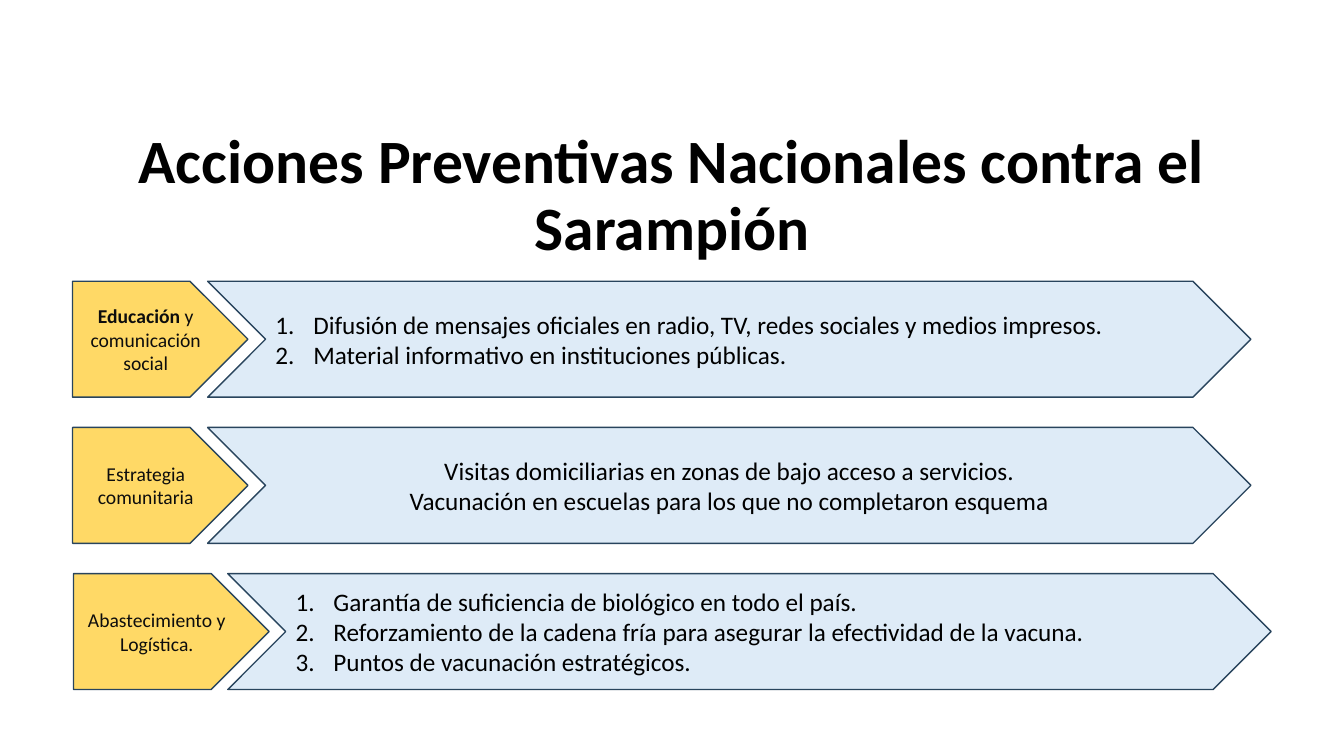
from lxml import etree
from pptx import Presentation
from pptx.dml.color import RGBColor
from pptx.enum import shapes, text
from pptx.oxml import ns
from pptx.util import Pt

COLORS = {
    "title": "000000",
    "label_fill": "FFD966",
    "label_text": "0D0D0D",
    "action_fill": "DEEBF7",
    "action_text": "000000",
    "outline": "28445D",
}
TITLE_FORMAT = {"name": "Calibri", "size": Pt(44), "bold": True}
LABEL_FORMAT = {"name": "Calibri", "size": Pt(14), "bold": False}
ACTION_FORMAT = {"name": "Calibri", "size": Pt(18), "bold": False}

ROW_TOP, ROW_PITCH, ROW_HEIGHT = 200.9, 104.4, 82.8
ACTION_WIDTH = 745.2
LIST_INDENT = 27

# label left, label width, action left, label runs (text, bold), numbered, actions
ROWS = [
    (51.84, 125.3, 148.3,
     [("Educación ", True), ("y comunicación social", False)], True,
     ["Difusión de mensajes oficiales en radio, TV, redes sociales y medios impresos.",
      "Material informativo en instituciones públicas."]),
    (51.84, 125.3, 148.3,
     [("Estrategia comunitaria", False)], False,
     ["Visitas domiciliarias en zonas de bajo acceso a servicios.",
      "Vacunación en escuelas para los que no completaron esquema"]),
    (52.56, 139.7, 162.7,
     [("Abastecimiento y Logística.", False)], True,
     ["Garantía de suficiencia de biológico en todo el país.",
      "Reforzamiento de la cadena fría para asegurar la efectividad de la vacuna.",
      "Puntos de vacunación estratégicos."]),
]


def rgb(name):
    return RGBColor.from_string(COLORS[name])


def format_font(font, values, color):
    for name, value in values.items():
        setattr(font, name, value)
    font.color.rgb = rgb(color)


def number_paragraph(paragraph):
    properties = paragraph._p.get_or_add_pPr()
    properties.set("marL", str(Pt(LIST_INDENT)))
    properties.set("indent", str(-Pt(LIST_INDENT)))
    bullet = etree.SubElement(properties, ns.qn("a:buAutoNum"))
    bullet.set("type", "arabicPeriod")


def add_title(slide, wording):
    title = slide.shapes.title
    title.left, title.top, title.width, title.height = (
        Pt(-9.4), Pt(88.6), Pt(979.2), Pt(104.4))
    frame = title.text_frame
    frame.word_wrap = True
    frame.auto_size = text.MSO_AUTO_SIZE.NONE
    frame.vertical_anchor = text.MSO_ANCHOR.MIDDLE
    paragraph = frame.paragraphs[0]
    paragraph.alignment = text.PP_ALIGN.CENTER
    paragraph.line_spacing = 0.9
    run = paragraph.add_run()
    run.text = wording
    format_font(run.font, TITLE_FORMAT, "title")


def add_arrow(group, kind, left, top, width, fill):
    shape = group.shapes.add_shape(kind, Pt(left), Pt(top), Pt(width), Pt(ROW_HEIGHT))
    shape.shadow.inherit = False
    shape.fill.solid()
    shape.fill.fore_color.rgb = rgb(fill)
    shape.line.color.rgb = rgb("outline")
    shape.line.width = Pt(1)
    shape.text_frame.word_wrap = True
    shape.text_frame.vertical_anchor = text.MSO_ANCHOR.MIDDLE
    return shape


def add_label(group, left, top, width, runs):
    shape = add_arrow(group, shapes.MSO_SHAPE.PENTAGON, left, top, width, "label_fill")
    paragraph = shape.text_frame.paragraphs[0]
    paragraph.alignment = text.PP_ALIGN.CENTER
    for wording, bold in runs:
        run = paragraph.add_run()
        run.text = wording
        format_font(run.font, {**LABEL_FORMAT, "bold": bold}, "label_text")


def add_actions(group, left, top, numbered, actions):
    shape = add_arrow(group, shapes.MSO_SHAPE.CHEVRON, left, top, ACTION_WIDTH, "action_fill")
    frame = shape.text_frame
    for index, action in enumerate(actions):
        paragraph = frame.add_paragraph() if index else frame.paragraphs[0]
        if numbered:
            paragraph.alignment = text.PP_ALIGN.LEFT
            number_paragraph(paragraph)
        else:
            paragraph.alignment = text.PP_ALIGN.CENTER
        run = paragraph.add_run()
        run.text = action
        format_font(run.font, ACTION_FORMAT, "action_text")


def main():
    presentation = Presentation()
    presentation.slide_width, presentation.slide_height = Pt(960), Pt(540)
    slide = presentation.slides.add_slide(presentation.slide_layouts[5])
    add_title(slide, "Acciones Preventivas Nacionales contra el Sarampión")
    group = slide.shapes.add_group_shape()
    for index, row in enumerate(ROWS):
        label_left, label_width, action_left, runs, numbered, actions = row
        top = ROW_TOP + index * ROW_PITCH
        add_label(group, label_left, top, label_width, runs)
        add_actions(group, action_left, top, numbered, actions)
    presentation.save("out.pptx")


if __name__ == "__main__":
    main()
